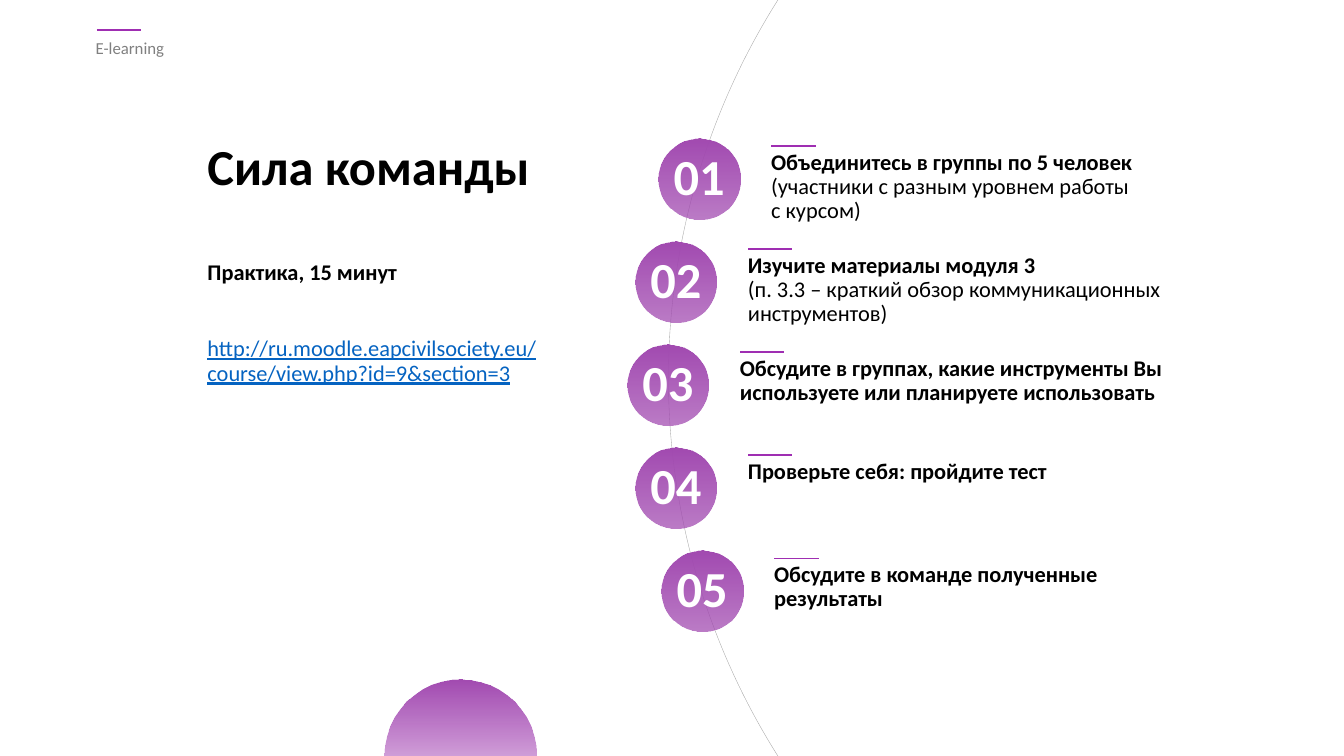
import pptx
import pptx.util
import pptx.dml.color
import pptx.enum.shapes
import pptx.enum.text
import pptx.oxml
from pptx.oxml.ns import nsdecls, qn

# Content
SECTION = "E-learning"
TITLE = "Сила команды"
PRACTICE = "Практика, 15 минут"
ADDRESS = "http://ru.moodle.eapcivilsociety.eu/course/view.php?id=9&section=3"

# Circle left, text width, heading, detail width, detail
STEPS = [
    (6.53, 4.61, "Объединитесь в группы по 5 человек",
     3.84, "(участники с разным уровнем работы с курсом)"),
    (6.3, 4.96, "Изучите материалы модуля 3",
     4.3, "(п. 3.3 – краткий обзор коммуникационных инструментов)"),
    (6.22, 4.66, "Обсудите в группах, какие инструменты Вы используете "
     "или планируете использовать", 0, ""),
    (6.3, 4.85, "Проверьте себя: пройдите тест", 0, ""),
    (6.56, 4.32, "Обсудите в команде полученные результаты", 0, ""),
]

# Layout and colours
FIRST_TOP, LAST_TOP = 1.37, 5.46
CIRCLE = 0.81
DASH = 0.44
DASH_GAP = 1.12
INSET = 0.1
LINE_STEP = 0.24
ACCENT, CIRCLE_COLOR = "9F2EB2", "A24AB1"
BLACK, WHITE, GREY, ARC_GREY, BLUE = "000000", "FFFFFF", "808080", "A6A6A6", "0563C1"

Inches, Pt = pptx.util.Inches, pptx.util.Pt
ALIGN = pptx.enum.text.PP_ALIGN
ANCHOR = pptx.enum.text.MSO_ANCHOR


def color(value):
    return pptx.dml.color.RGBColor.from_string(value)


def write(frame, text, size=16, ink=BLACK, bold=False, underline=False,
          align=ALIGN.LEFT, before=0, new=False):
    para = frame.add_paragraph() if new else frame.paragraphs[0]
    para.alignment = align
    para.line_spacing = 0.9
    para.space_before = Pt(before)
    span = para.add_run()
    span.text = text
    span.font.name = "Calibri"
    span.font.size = Pt(size)
    span.font.bold = bold
    span.font.underline = underline
    span.font.color.rgb = color(ink)


def add_box(left, top, width, height, text, **style):
    box = page.shapes.add_textbox(*map(Inches, (left, top, width, height)))
    box.text_frame.word_wrap = True
    write(box.text_frame, text, **style)
    return box


def add_circle(left, top, size):
    circle = page.shapes.add_shape(pptx.enum.shapes.MSO_SHAPE.OVAL,
                                   *map(Inches, (left, top, size, size)))
    circle.shadow.inherit = False
    circle.fill.background()
    circle.line.fill.background()
    return circle


def fade(circle, start, end, opacity):
    """Fill with a downward gradient whose last stop is partly transparent."""
    gradient = pptx.oxml.parse_xml(
        f'<a:gradFill {nsdecls("a")} rotWithShape="1"><a:gsLst>'
        f'<a:gs pos="0"><a:srgbClr val="{start}"/></a:gs>'
        f'<a:gs pos="100000"><a:srgbClr val="{end}">'
        f'<a:alpha val="{opacity * 1000}"/></a:srgbClr></a:gs>'
        '</a:gsLst><a:lin ang="5400000" scaled="0"/></a:gradFill>')
    properties = circle._element.spPr
    properties.replace(properties.find(qn("a:noFill")), gradient)


def add_dash(left, top):
    dash = page.shapes.add_connector(
        pptx.enum.shapes.MSO_CONNECTOR.STRAIGHT,
        *map(Inches, (left, top, left + DASH, top)))
    dash.line.color.rgb = color(ACCENT)
    dash.line.width = Pt(1.25)
    dash._element.spPr.append(
        pptx.oxml.parse_xml(f'<a:effectLst {nsdecls("a")}/>'))


deck = pptx.Presentation()
deck.slide_width, deck.slide_height = Inches(13.33), Inches(7.5)
page = deck.slides.add_slide(deck.slide_layouts[6])

# Background arc and lower half circle
arc = add_circle(6.63, -3.27, 14.04)
arc.line.color.rgb = color(ARC_GREY)
arc.line.width = Pt(0.25)
fade(add_circle(3.81, 6.74, 1.51), CIRCLE_COLOR, ACCENT, 0)

# Section label
add_dash(0.96, 0.3)
add_box(0.85, 0.35, 2.53, 0.56, SECTION, size=12, ink=GREY, align=ALIGN.JUSTIFY)

# Title and practice block
add_box(1.96, 1.36, 3.74, 1.18, TITLE, size=36, bold=True)
practice = add_box(1.96, 2.54, 3.74, 3.67, PRACTICE, bold=True, align=ALIGN.JUSTIFY)
write(practice.text_frame, ADDRESS, ink=BLUE, underline=True,
      align=ALIGN.JUSTIFY, before=37.5, new=True)

# Numbered steps
pitch = (LAST_TOP - FIRST_TOP) / (len(STEPS) - 1)
for index, (left, width, heading, detail_width, detail) in enumerate(STEPS):
    top = FIRST_TOP + index * pitch
    circle = add_circle(left, top, CIRCLE)
    fade(circle, CIRCLE_COLOR, CIRCLE_COLOR, 72)
    frame = circle.text_frame
    frame.word_wrap = False
    frame.vertical_anchor = ANCHOR.MIDDLE
    frame.margin_left = frame.margin_right = 0
    frame.margin_top = frame.margin_bottom = 0
    write(frame, f"{index + 1:02d}", size=36, ink=WHITE, bold=True,
          align=ALIGN.CENTER)

    dash_left, dash_top = left + DASH_GAP, top + 0.08
    add_dash(dash_left, dash_top)
    text_left = dash_left - INSET
    add_box(text_left, dash_top, width, LINE_STEP, heading, bold=True)
    if detail:
        add_box(text_left, dash_top + LINE_STEP, detail_width, 2 * LINE_STEP, detail)

deck.save("out.pptx")
